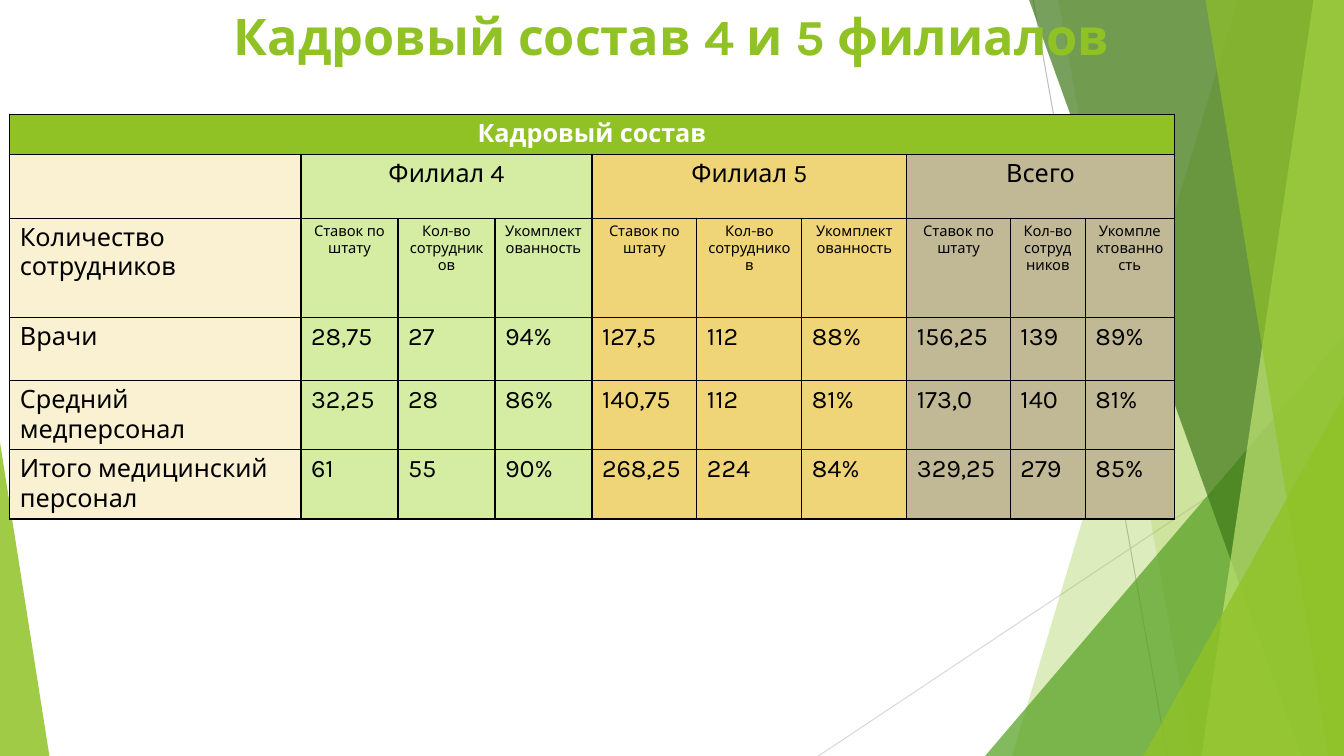
from lxml import etree
from pptx import Presentation
from pptx.dml.color import RGBColor
from pptx.enum.shapes import MSO_CONNECTOR, MSO_SHAPE
from pptx.enum.text import MSO_ANCHOR, MSO_AUTO_SIZE, PP_ALIGN
from pptx.oxml.ns import qn
from pptx.util import Pt

STRAIGHT = MSO_CONNECTOR.STRAIGHT
TRIANGLE = MSO_SHAPE.ISOSCELES_TRIANGLE
LEFT, CENTER = PP_ALIGN.LEFT, PP_ALIGN.CENTER
TOP = MSO_ANCHOR.TOP
NO_AUTOFIT = MSO_AUTO_SIZE.NONE

LIME = RGBColor(0x90, 0xC2, 0x26)
PALE_LIME = RGBColor(0xC0, 0xE4, 0x74)
GREEN = RGBColor(0x54, 0xA0, 0x21)
DARK_GREEN = RGBColor(0x3F, 0x78, 0x19)
GRAY = RGBColor(0xBF, 0xBF, 0xBF)
LIGHT_GRAY = RGBColor(0xD9, 0xD9, 0xD9)
CREAM = RGBColor(0xFA, 0xF1, 0xD2)
MINT = RGBColor(0xD5, 0xED, 0xA2)
GOLD = RGBColor(0xF0, 0xD5, 0x78)
TAUPE = RGBColor(0xC1, 0xB9, 0x95)
WHITE = RGBColor(0xFF, 0xFF, 0xFF)
BLACK = RGBColor(0, 0, 0)

WIDTH, HEIGHT = 960, 540

# Ribbons: top left x, bottom left x, colour, opacity; each reaches the right edge
BACK_RIBBONS = [(884.2, 722.9, LIME, 30), (756, 851.8, LIME, 20)]
FRONT_RIBBONS = [
    (735.1, 929.5, DARK_GREEN, 70),
    (938.2, 858.2, PALE_LIME, 70),
    (861.1, 949, LIME, 65),
]

BRANCHES = [("Филиал 4", MINT), ("Филиал 5", GOLD), ("Всего", TAUPE)]
MEASURES = ["Ставок по штату", "Кол-во сотрудников", "Укомплектованность"]
STAFF = [
    ("Врачи", "28,75", "27", "94%", "127,5", "112", "88%", "156,25", "139", "89%"),
    ("Средний медперсонал", "32,25", "28", "86%", "140,75", "112", "81%", "173,0", "140", "81%"),
    ("Итого медицинский персонал", "61", "55", "90%", "268,25", "224", "84%", "329,25", "279", "85%"),
]
COLUMN_WIDTHS = [208] + [69.3] * 3 + [75] * 3 + [74, 53.5, 63.6]
ROW_HEIGHTS = [28.5, 45.5, 71, 45, 49.5, 49.5]


class Slide:
    def __init__(self, page, font):
        self.page = page
        self.shapes = page.shapes
        self.font = font

    def add_text(self, frame, text, align, color, **font_values):
        para = frame.paragraphs[0]
        para.alignment = align
        span = para.add_run()
        span.text = text
        for name, value in {"name": self.font, **font_values}.items():
            setattr(span.font, name, value)
        span.font.color.rgb = color

    def line(self, start, end, color):
        connector = self.shapes.add_connector(STRAIGHT, *map(Pt, start + end))
        connector.line.color.rgb = color
        connector.line.width = Pt(0.75)
        etree.SubElement(connector.element.spPr, qn("a:effectLst"))

    def paint(self, shape, color, opacity):
        shape.shadow.inherit = False
        shape.line.fill.background()
        shape.fill.solid()
        shape.fill.fore_color.rgb = color
        tint = shape.element.spPr.find(qn("a:solidFill"))[0]
        etree.SubElement(tint, qn("a:alpha"), val=str(opacity * 1000))

    def ribbon(self, top_x, bottom_x, color, opacity):
        builder = self.shapes.build_freeform(Pt(top_x), 0)
        corners = [(WIDTH, 0), (WIDTH, HEIGHT), (bottom_x, HEIGHT)]
        builder.add_line_segments([(Pt(x), Pt(y)) for x, y in corners])
        self.paint(builder.convert_to_shape(), color, opacity)

    def triangle(self, left, top, width, apex, color, opacity):
        """Draw a triangle standing on the bottom edge; apex runs from 0 (left) to 1 (right)."""
        box = map(Pt, (left, top, width, HEIGHT - top))
        shape = self.shapes.add_shape(TRIANGLE, *box)
        shape.adjustments[0] = apex
        self.paint(shape, color, opacity)

    def title(self, text):
        box = self.shapes.title
        place = {"left": 0, "top": 0, "width": Pt(WIDTH), "height": Pt(62.6)}
        for name, value in place.items():
            setattr(box, name, value)
        frame = box.text_frame
        for name, value in {"vertical_anchor": TOP, "auto_size": NO_AUTOFIT, "word_wrap": True}.items():
            setattr(frame, name, value)
        self.add_text(frame, text, CENTER, LIME, size=Pt(36), bold=True)
        box.element.getparent().append(box.element)  # in front of the ribbons

    def table(self, left, top, widths, heights):
        frame = self.shapes.add_table(
            len(heights), len(widths), Pt(left), Pt(top), Pt(sum(widths)), Pt(sum(heights)))
        table = frame.table
        for column, width in zip(table.columns, widths):
            column.width = Pt(width)
        for row, height in zip(table.rows, heights):
            row.height = Pt(height)
        return table

    def cell(self, cell, text, fill, align=LEFT, size=18, color=BLACK, bold=False):
        properties = cell._tc.get_or_add_tcPr()
        for side in ("a:lnL", "a:lnR", "a:lnT", "a:lnB"):
            border = etree.SubElement(properties, qn(side), w=str(Pt(1)))
            solid = etree.SubElement(border, qn("a:solidFill"))
            etree.SubElement(solid, qn("a:srgbClr"), val=str(BLACK))
        cell.fill.solid()
        cell.fill.fore_color.rgb = fill
        if text:
            self.add_text(cell.text_frame, text, align, color, size=Pt(size), bold=bold)


def draw_background(slide):
    slide.line((738, 0), (833.8, HEIGHT), GRAY)
    slide.line((WIDTH, 290.2), (584.6, HEIGHT), LIGHT_GRAY)
    for ribbon in BACK_RIBBONS:
        slide.ribbon(*ribbon)
    slide.triangle(703.6, 240, 256.4, 1, GREEN, 72)
    for ribbon in FRONT_RIBBONS:
        slide.ribbon(*ribbon)
    slide.triangle(816.7, 283, 143.3, 1, LIME, 80)
    slide.triangle(0, 316, 35.3, 0, LIME, 85)


def draw_staff_table(slide):
    table = slide.table(7, 81.8, COLUMN_WIDTHS, ROW_HEIGHTS)
    fills = [CREAM] + [fill for _, fill in BRANCHES for _ in MEASURES]
    group_names = [""]
    for name, _ in BRANCHES:
        group_names += [name, "", ""]
    measure_names = ["Количество сотрудников"] + MEASURES * len(BRANCHES)

    for column, fill in enumerate(fills):
        heading = "" if column else "Кадровый состав"
        slide.cell(table.cell(0, column), heading, LIME, CENTER, color=WHITE, bold=True)
        slide.cell(table.cell(1, column), group_names[column], fill, CENTER)
        align, size = (CENTER, 10.5) if column else (LEFT, 18)
        slide.cell(table.cell(2, column), measure_names[column], fill, align, size)
        for row, record in enumerate(STAFF, start=3):
            slide.cell(table.cell(row, column), record[column], fill)

    table.cell(0, 0).merge(table.cell(0, len(fills) - 1))
    for first in range(1, len(fills), len(MEASURES)):
        table.cell(1, first).merge(table.cell(1, first + len(MEASURES) - 1))


def main():
    deck = Presentation()
    deck.slide_width, deck.slide_height = Pt(WIDTH), Pt(HEIGHT)
    slide = Slide(deck.slides.add_slide(deck.slide_layouts[5]), "Karla")
    draw_background(slide)
    slide.title("Кадровый состав 4 и 5 филиалов")
    draw_staff_table(slide)
    deck.save("out.pptx")


if __name__ == "__main__":
    main()
